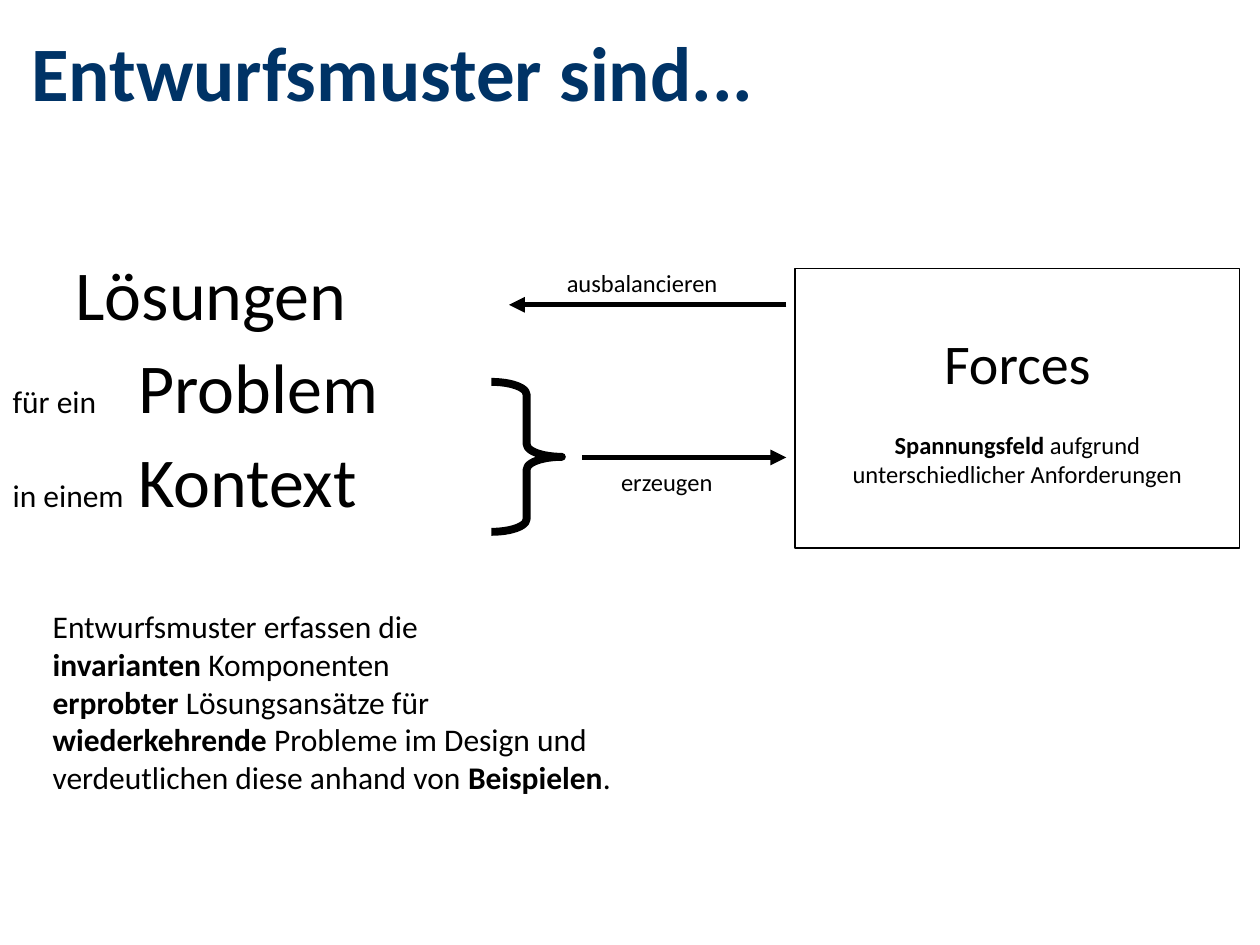
import pptx
import pptx.util
import pptx.dml.color
import pptx.enum.shapes
import pptx.enum.text
import pptx.oxml
import lxml.etree

Pt = pptx.util.Pt
Kind = pptx.enum.shapes.MSO_SHAPE
Align = pptx.enum.text.PP_ALIGN
Anchor = pptx.enum.text.MSO_ANCHOR
BLACK = "000000"


def tint(color, code):
    color.rgb = pptx.dml.color.RGBColor.from_string(code)


def write(frame, rows, code=BLACK, align=Align.LEFT):
    frame.word_wrap = True
    for i, row in enumerate(rows):
        para = frame.paragraphs[0] if i == 0 else frame.add_paragraph()
        para.alignment = align
        for text, size, bold in row:
            run = para.add_run()
            run.text = text
            run.font.name = "Calibri"
            run.font.size = Pt(size)
            run.font.bold = bold
            tint(run.font.color, code)


deck = pptx.Presentation()
deck.slide_width, deck.slide_height = Pt(720), Pt(540)
slide = deck.slides.add_slide(deck.slide_layouts[1])
shapes = slide.shapes

title = shapes.title
title.left, title.top, title.width, title.height = Pt(10.8), Pt(14.4), Pt(620.6), Pt(58.3)
write(title.text_frame, [[("Entwurfsmuster sind...", 44, True)]], "003366")
title.text_frame.vertical_anchor = Anchor.MIDDLE
title.text_frame.auto_size = pptx.enum.text.MSO_AUTO_SIZE.NONE
title.text_frame.paragraphs[0].line_spacing = 0.9

body = slide.placeholders[1]
body.left, body.top, body.width, body.height = Pt(0), Pt(105.8), Pt(448.6), Pt(235.4)
frame = body.text_frame
frame.auto_size = pptx.enum.text.MSO_AUTO_SIZE.NONE
frame.margin_top = Pt(43)
terms = [("", "Lösungen", 90), ("für ein", "Problem", 73), ("in einem", "Kontext", 90)]
write(frame, [[(lead + "\t", 18, False), (term, 40, False)] for lead, term, stop in terms])
for para, (lead, term, stop) in zip(frame.paragraphs, terms):
    para.line_spacing = 0.9
    para.space_before = Pt(10)
    props = para._p.get_or_add_pPr()
    props.set("marL", "0")
    props.set("indent", "0")
    lxml.etree.SubElement(props, pptx.oxml.ns.qn("a:buNone"))
    tabs = lxml.etree.SubElement(props, pptx.oxml.ns.qn("a:tabLst"))
    lxml.etree.SubElement(tabs, pptx.oxml.ns.qn("a:tab"), pos=str(Pt(stop)), algn="l")

box = shapes.add_shape(Kind.RECTANGLE, Pt(454.3), Pt(153.4), Pt(254.2), Pt(159.8))
brace = shapes.add_shape(Kind.RIGHT_BRACE, Pt(280.8), Pt(218.2), Pt(40.3), Pt(85.7))
brace.adjustments[0] = 0.18
for shape, weight in [(box, 0.75), (brace, 4.5)]:
    shape.shadow.inherit = False
    shape.fill.background()
    shape.line.width = Pt(weight)
    tint(shape.line.color, BLACK)

write(box.text_frame, [
    [("Forces", 32, False)],
    [("Spannungsfeld", 14, True), (" aufgrund", 14, False)],
    [("unterschiedlicher Anforderungen", 14, False)],
], align=Align.CENTER)
box.text_frame.vertical_anchor = Anchor.MIDDLE
box.text_frame.paragraphs[1].space_before = Pt(19.5)

for start, end, y in [(332.6, 449.3, 261.4), (449.3, 290.9, 174.2)]:
    line = shapes.add_connector(pptx.enum.shapes.MSO_CONNECTOR.STRAIGHT,
                                Pt(start), Pt(y), Pt(end), Pt(y))
    line.line.width = Pt(3)
    tint(line.line.color, BLACK)
    lxml.etree.SubElement(line.line._get_or_add_ln(), pptx.oxml.ns.qn("a:tailEnd"), type="triangle")
    lxml.etree.SubElement(line._element.spPr, pptx.oxml.ns.qn("a:effectLst"))

notes = [
    (347.8, 263.5, 79.2, 23.8, [[("erzeugen", 14, False)]]),
    (316.8, 149.8, 120.2, 23.8, [[("ausbalancieren", 14, False)]]),
    (23, 343.4, 517, 151.2, [
        [("Entwurfsmuster erfassen die", 18, False)],
        [("invarianten", 18, True), (" Komponenten", 18, False)],
        [("erprobter ", 18, True), ("Lösungsansätze für", 18, False)],
        [("wiederkehrende", 18, True), (" Probleme im Design und", 18, False)],
        [("verdeutlichen diese anhand von ", 18, False), ("Beispielen", 18, True), (".", 18, False)],
    ]),
]
for left, top, width, height, rows in notes:
    note = shapes.add_textbox(Pt(left), Pt(top), Pt(width), Pt(height))
    write(note.text_frame, rows)

deck.save("out.pptx")
